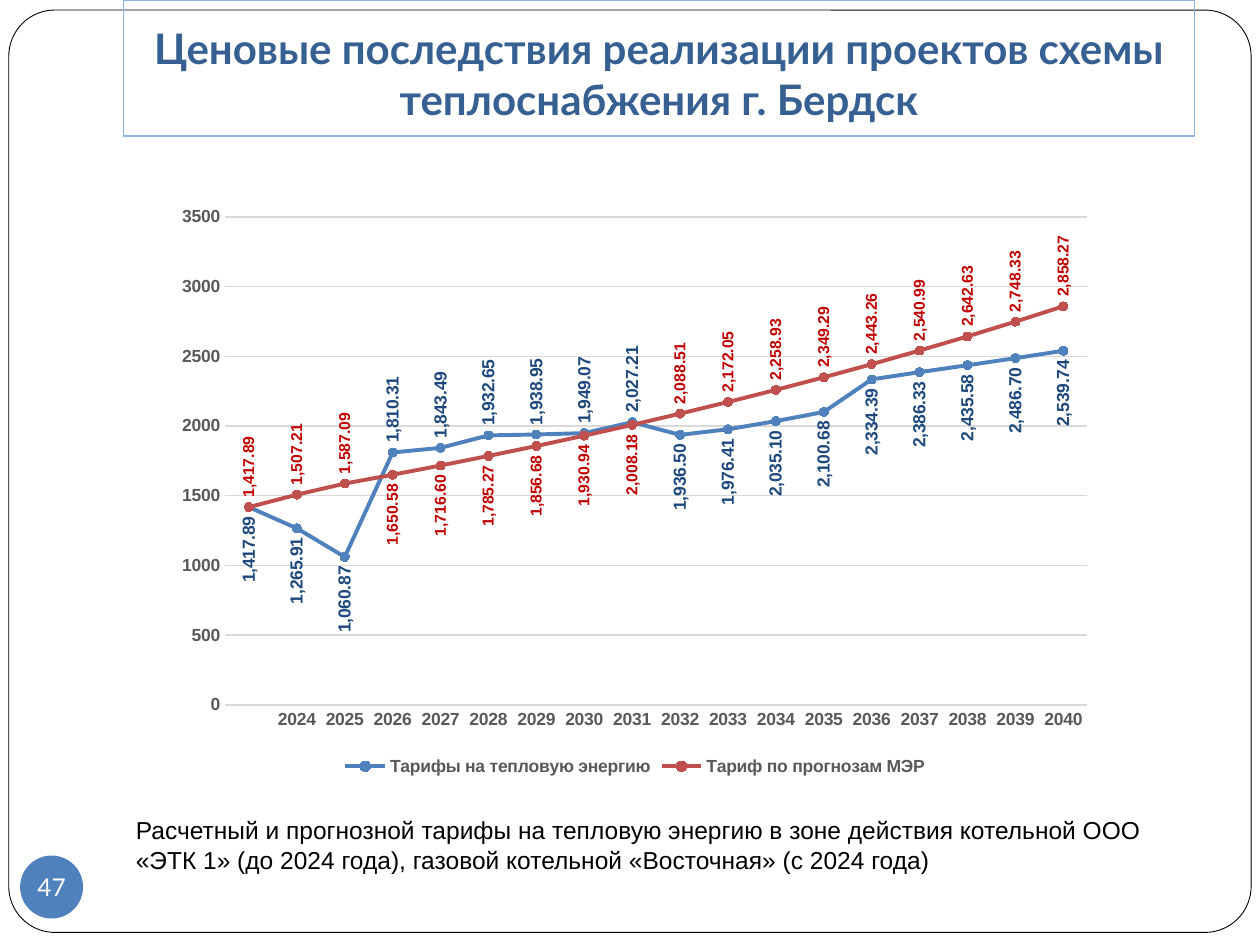
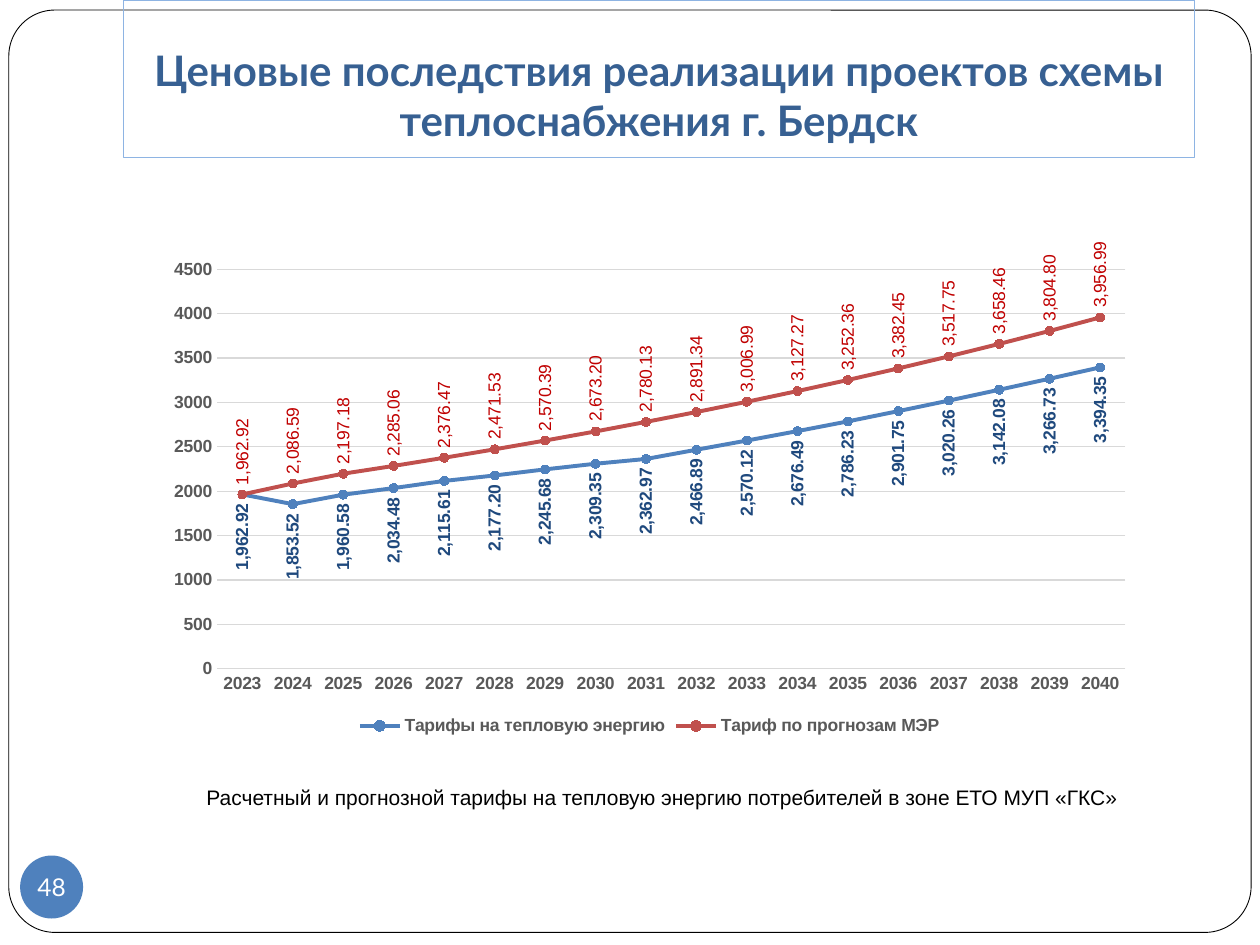
from pptx import Presentation
from pptx.chart.data import CategoryChartData
from pptx.dml.color import RGBColor
from pptx.enum.chart import (XL_CHART_TYPE, XL_LABEL_POSITION, XL_LEGEND_POSITION,
                             XL_MARKER_STYLE, XL_TICK_MARK)
from pptx.enum.shapes import MSO_SHAPE
from pptx.enum.text import MSO_ANCHOR, MSO_AUTO_SIZE, PP_ALIGN
from pptx.oxml import parse_xml
from pptx.oxml.ns import nsdecls
from pptx.util import Inches, Pt

COLORS = {
    "white": "FFFFFF", "black": "000000", "title": "376092", "title_line": "8EB4E3",
    "tariff": "4F81BD", "forecast": "C0504D", "tariff_label": "1F497D",
    "forecast_label": "C00000", "axis": "595959", "grid": "D9D9D9",
}
COLUMNS, ROWS = 100, 75
TITLE = "Ценовые последствия реализации проектов схемы теплоснабжения г. Бердск"
TARIFF, FORECAST = "Тарифы на тепловую энергию", "Тариф по прогнозам МЭР"
ABOVE, BELOW = XL_LABEL_POSITION.ABOVE, XL_LABEL_POSITION.BELOW


def rgb(name):
    return RGBColor.from_string(COLORS[name])


def set_font(font, size=10, face="Arial", color="axis", bold=False):
    font.size, font.name, font.bold = Pt(size), face, bold
    font.color.rgb = rgb(color)


def write(tf, text, align=PP_ALIGN.LEFT, anchor=MSO_ANCHOR.TOP, insets=(0.1, 0.05, 0.1, 0.05),
          wrap=True, **style):
    tf.auto_size, tf.word_wrap, tf.vertical_anchor = MSO_AUTO_SIZE.NONE, wrap, anchor
    tf.margin_left, tf.margin_top, tf.margin_right, tf.margin_bottom = map(Inches, insets)
    p = tf.paragraphs[0]
    p.alignment = align
    r = p.add_run()
    r.text = text
    set_font(r.font, **style)


def set_line(line, color, width):
    line.color.rgb, line.width = rgb(color), Pt(width)


class Deck:
    def __init__(self):
        self.prs = Presentation()
        self.prs.slide_width, self.prs.slide_height = Inches(10), Inches(7.5)
        self.s = None

    def box(self, left, top, width, height):
        """Turn grid columns and rows into slide lengths."""
        col, row = self.prs.slide_width / COLUMNS, self.prs.slide_height / ROWS
        return int(left * col), int(top * row), int(width * col), int(height * row)

    def shape(self, kind, cell, fill):
        sp = self.s.shapes.add_shape(kind, *self.box(*cell))
        sp.shadow.inherit = False
        sp.fill.solid()
        sp.fill.fore_color.rgb = rgb(fill)
        return sp

    def new_slide(self, number, title_rows):
        self.s = self.prs.slides.add_slide(self.prs.slide_layouts[5])
        self.frame()
        self.title(title_rows)
        self.page_number(number)

    def frame(self):
        sp = self.shape(MSO_SHAPE.ROUNDED_RECTANGLE, (0.7, 0.8, 98.6, 73.2), "white")
        sp.adjustments[0] = 0.05
        set_line(sp.line, "black", 0.5)
        self.s.shapes._spTree.insert(2, sp._element)

    def title(self, rows):
        sp = self.s.shapes.title
        sp.left, sp.top, sp.width, sp.height = self.box(9.8, 0, 85, rows)
        set_line(sp.line, "title_line", 0.75)
        write(sp.text_frame, TITLE, PP_ALIGN.CENTER, MSO_ANCHOR.BOTTOM, (0.1, 0.05, 0.1, 0.1),
              size=24, face="Lato", color="title", bold=True)

    def page_number(self, number):
        sp = self.shape(MSO_SHAPE.OVAL, (1.6, 67.9, 5, 5), "tariff")
        sp.line.fill.background()
        write(sp.text_frame, str(number), PP_ALIGN.CENTER, MSO_ANCHOR.MIDDLE, (0, 0, 0, 0),
              wrap=False, size=14, face="Lato", color="white")

    def caption(self, text, cell, size):
        sp = self.s.shapes.add_textbox(*self.box(*cell))
        write(sp.text_frame, text, size=size, color="black")

    def tariff_chart(self, cell, plot_area, years, tariffs, forecasts, top_value,
                     forecast_style, crossed=()):
        """Add the line chart; points in crossed have their labels on the other side."""
        data = CategoryChartData(number_format="#,##0.00")
        data.categories = years
        data.add_series(TARIFF, tariffs)
        data.add_series(FORECAST, forecasts)
        chart = self.s.shapes.add_chart(XL_CHART_TYPE.LINE_MARKERS, *self.box(*cell), data).chart
        chart.has_title = False
        set_font(chart.font, face="Times New Roman", color="black")
        chart.has_legend = True
        chart.legend.position = XL_LEGEND_POSITION.BOTTOM
        chart.legend.include_in_layout = False
        set_font(chart.legend.font, bold=True)
        self.format_axes(chart, top_value)
        self.place_plot(chart, plot_area)
        tariff, forecast = chart.plots[0].series
        self.format_series(tariff, "tariff", BELOW, ABOVE, crossed, bold=True)
        self.format_series(forecast, "forecast", ABOVE, BELOW, crossed, **forecast_style)

    def format_axes(self, chart, top_value):
        years, values = chart.category_axis, chart.value_axis
        for axis in (years, values):
            axis.major_tick_mark = axis.minor_tick_mark = XL_TICK_MARK.NONE
            set_font(axis.tick_labels.font, bold=True)
        set_line(years.format.line, "grid", 0.75)
        values.format.line.fill.background()
        values.minimum_scale, values.maximum_scale, values.major_unit = 0, top_value, 500
        values.tick_labels.number_format = "General"
        values.tick_labels.number_format_is_linked = False
        set_line(values.major_gridlines.format.line, "grid", 0.75)

    def place_plot(self, chart, shares):
        """Fix the inner plot area, given as shares of the chart's size."""
        area = chart._chartSpace.xpath(".//c:plotArea")[0]
        for old in area.xpath("c:layout"):
            area.remove(old)
        sizes = "".join(f'<c:{tag} val="{share}"/>' for tag, share in zip("xywh", shares))
        area.insert(0, parse_xml(
            f'<c:layout {nsdecls("c")}><c:manualLayout><c:layoutTarget val="inner"/>'
            f'<c:xMode val="edge"/><c:yMode val="edge"/>{sizes}</c:manualLayout></c:layout>'))

    def format_series(self, series, name, side, other_side, crossed, **label_style):
        label_style["color"] = f"{name}_label"
        series.smooth = False
        set_line(series.format.line, name, 2.25)
        marker = series.marker
        marker.style, marker.size = XL_MARKER_STYLE.CIRCLE, 5
        marker.format.fill.solid()
        marker.format.fill.fore_color.rgb = rgb(name)
        set_line(marker.format.line, name, 0.75)
        labels = series.data_labels
        labels.show_value = True
        labels.number_format, labels.number_format_is_linked = "#,##0.00", False
        labels.position = side
        set_font(labels.font, **label_style)
        for i in crossed:
            label = series.points[i].data_label
            set_font(label.font, **label_style)
            label.position = other_side
        for body in series._element.xpath("c:dLbls//a:bodyPr"):
            body.set("rot", "-5400000")
            body.set("vert", "horz")


def main():
    deck = Deck()
    years = [str(year) for year in range(2023, 2041)]

    deck.new_slide(47, title_rows=10.8)
    deck.caption("Расчетный и прогнозной тарифы на тепловую энергию в зоне действия котельной ООО "
                 "«ЭТК 1» (до 2024 года), газовой котельной «Восточная» (с 2024 года)",
                 (9.8, 64.2, 82.7, 5.7), size=14)
    deck.tariff_chart(
        (13, 15.5, 74.8, 46.5), (0.065, 0.037, 0.915, 0.833), [""] + years[1:],
        (1417.89, 1265.91, 1060.87, 1810.31, 1843.49, 1932.65, 1938.95, 1949.07, 2027.21,
         1936.50, 1976.41, 2035.10, 2100.68, 2334.39, 2386.33, 2435.58, 2486.70, 2539.74),
        (1417.89, 1507.21, 1587.09, 1650.58, 1716.60, 1785.27, 1856.68, 1930.94, 2008.18,
         2088.51, 2172.05, 2258.93, 2349.29, 2443.26, 2540.99, 2642.63, 2748.33, 2858.27),
        top_value=3500, forecast_style={"size": 9, "bold": True}, crossed=range(3, 9))

    deck.new_slide(48, title_rows=12.5)
    deck.caption("Расчетный и прогнозной тарифы на тепловую энергию потребителей "
                 "в зоне ЕТО МУП «ГКС»", (15.4, 61.8, 84, 3), size=12)
    deck.tariff_chart(
        (12.2, 18.6, 78.7, 40.2), (0.064, 0.069, 0.916, 0.789), years,
        (1962.92, 1853.52, 1960.58, 2034.48, 2115.61, 2177.20, 2245.68, 2309.35, 2362.97,
         2466.89, 2570.12, 2676.49, 2786.23, 2901.75, 3020.26, 3142.08, 3266.73, 3394.35),
        (1962.92, 2086.59, 2197.18, 2285.06, 2376.47, 2471.53, 2570.39, 2673.20, 2780.13,
         2891.34, 3006.99, 3127.27, 3252.36, 3382.45, 3517.75, 3658.46, 3804.80, 3956.99),
        top_value=4500, forecast_style={"size": 10})

    deck.prs.save("out.pptx")


if __name__ == "__main__":
    main()
